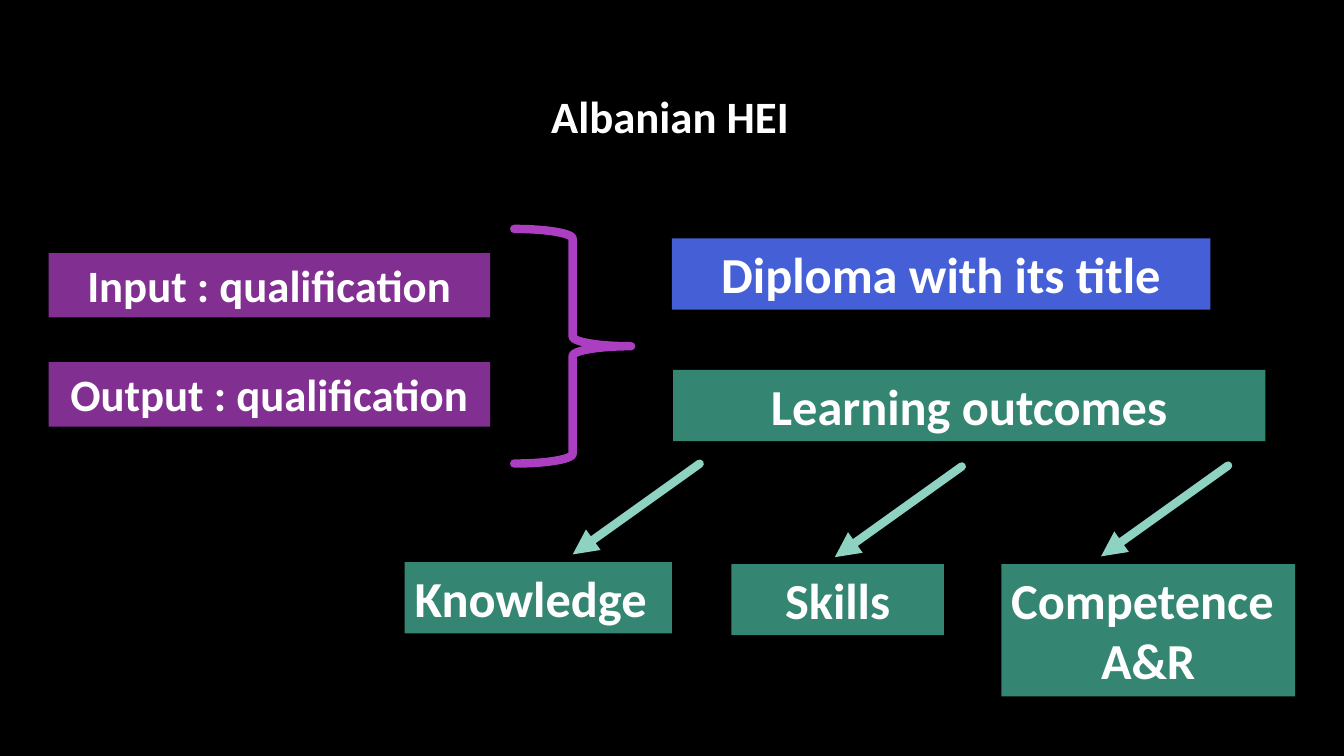
from lxml import etree
from pptx import Presentation
from pptx.dml.color import RGBColor
from pptx.enum.shapes import MSO_CONNECTOR, MSO_SHAPE
from pptx.enum.text import MSO_ANCHOR, PP_ALIGN
from pptx.oxml.ns import qn
from pptx.util import Pt

RECTANGLE = MSO_SHAPE.RECTANGLE
RIGHT_BRACE = MSO_SHAPE.RIGHT_BRACE
STRAIGHT = MSO_CONNECTOR.STRAIGHT
TOP = MSO_ANCHOR.TOP
LEFT = PP_ALIGN.LEFT
CENTER = PP_ALIGN.CENTER

BLACK = RGBColor(0x00, 0x00, 0x00)
WHITE = RGBColor(0xFF, 0xFF, 0xFF)
PURPLE = RGBColor(0x81, 0x2F, 0x91)
ORCHID = RGBColor(0xAC, 0x3E, 0xC1)
BLUE = RGBColor(0x45, 0x5F, 0xD6)
GREEN = RGBColor(0x34, 0x86, 0x72)
MINT = RGBColor(0x8E, 0xD3, 0xC2)

FONT = "Calibri"
LINE_WIDTH = 6
ARROW_RUN = 90.7
ARROW_DROP = 64.8


def write_text(shape, lines, size, alignments):
    text_frame = shape.text_frame
    text_frame.word_wrap = True
    text_frame.vertical_anchor = TOP
    text_frame.text = "\n".join(lines)
    for paragraph, alignment in zip(text_frame.paragraphs, alignments):
        paragraph.alignment = alignment
        for run in paragraph.runs:
            run.font.name = FONT
            run.font.size = Pt(size)
            run.font.bold = True
            run.font.color.rgb = WHITE


def add_title(slide, text, left, top, width, height):
    box = slide.shapes.add_textbox(Pt(left), Pt(top), Pt(width), Pt(height))
    write_text(box, [text], 32, [CENTER])


def add_box(slide, lines, left, top, width, height, color, size=36, alignments=(CENTER,)):
    shape = slide.shapes.add_shape(RECTANGLE, Pt(left), Pt(top), Pt(width), Pt(height))
    shape.shadow.inherit = False
    shape.fill.solid()
    shape.fill.fore_color.rgb = color
    shape.line.fill.background()
    write_text(shape, lines, size, alignments)


def style_line(shape, color):
    shape.line.color.rgb = color
    shape.line.width = Pt(LINE_WIDTH)
    outline = shape.line._get_or_add_ln()
    outline.set("cap", "rnd")
    return outline


def add_brace(slide, left, top, width, height):
    brace = slide.shapes.add_shape(RIGHT_BRACE, Pt(left), Pt(top), Pt(width), Pt(height))
    brace.shadow.inherit = False
    brace.fill.background()
    style_line(brace, ORCHID)


def add_arrow(slide, start_x, start_y):
    arrow = slide.shapes.add_connector(
        STRAIGHT, Pt(start_x), Pt(start_y), Pt(start_x - ARROW_RUN), Pt(start_y + ARROW_DROP)
    )
    outline = style_line(arrow, MINT)
    etree.SubElement(outline, qn("a:tailEnd"), type="triangle")
    etree.SubElement(arrow._element.spPr, qn("a:effectLst"))


def main():
    presentation = Presentation()
    presentation.slide_width = Pt(960)
    presentation.slide_height = Pt(540)
    slide = presentation.slides.add_slide(presentation.slide_layouts[6])
    slide.background.fill.solid()
    slide.background.fill.fore_color.rgb = BLACK

    for text, top in (("Output : qualification", 258.7), ("Input : qualification", 180.8)):
        add_box(slide, [text], 34.7, top, 315.5, 46, PURPLE, size=32)
    add_brace(slide, 367.3, 163.5, 83.5, 167.6)

    add_box(slide, ["Diploma with its title"], 480, 170.3, 384.6, 50.9, BLUE)
    add_box(slide, ["Learning outcomes"], 480.8, 264.2, 423, 50.9, GREEN)
    for start_x, start_y in ((499.8, 331.2), (687, 333.2), (877.2, 332.6)):
        add_arrow(slide, start_x, start_y)

    add_box(slide, ["Knowledge"], 289.1, 401.6, 190.9, 50.9, GREEN, alignments=[LEFT])
    add_box(slide, ["Skills"], 522.4, 402.9, 151.9, 50.9, GREEN)
    add_box(slide, ["Competence", "A&R"], 715.2, 402.9, 209.9, 94.5, GREEN,
            alignments=[LEFT, CENTER])

    add_title(slide, "Albanian HEI", 321.8, 59.8, 313.9, 46)
    presentation.save("out.pptx")


if __name__ == "__main__":
    main()
